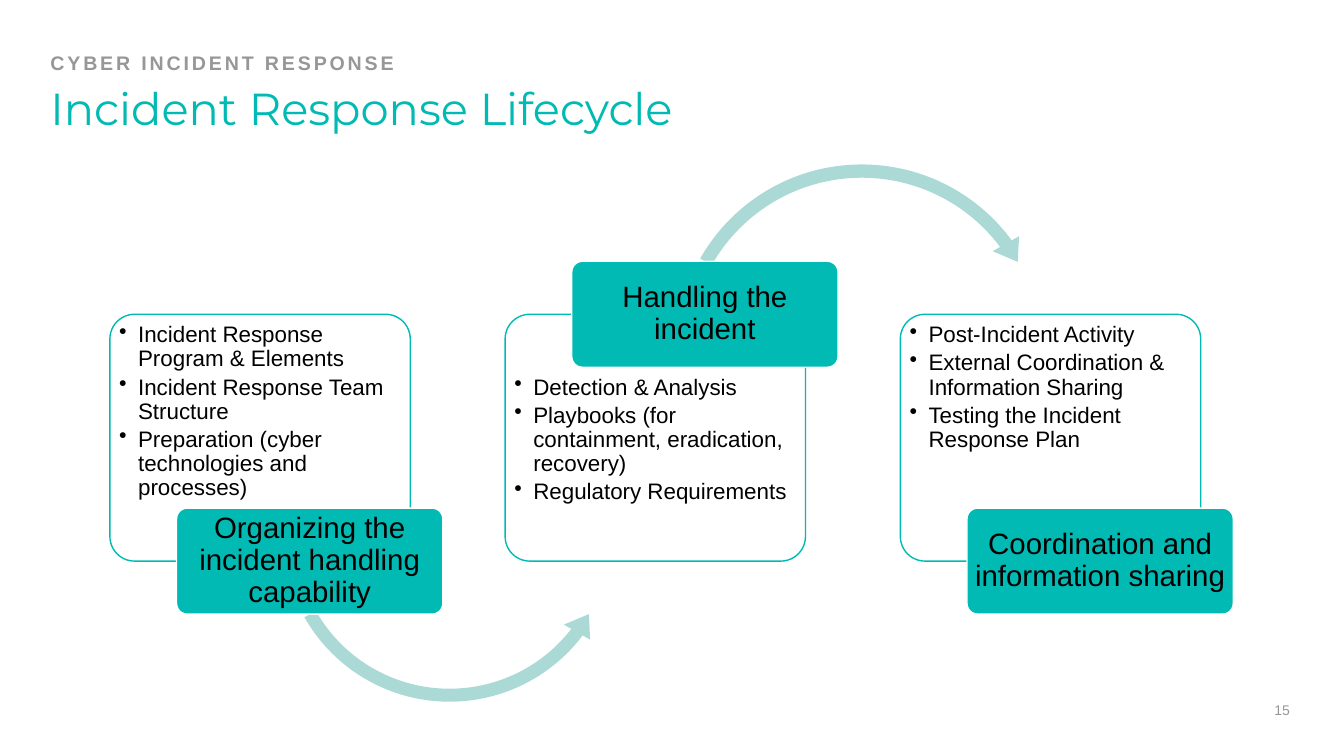
import pptx
import pptx.util
import pptx.dml.color
import pptx.enum.shapes
import pptx.enum.text
import pptx.oxml.ns
import lxml.etree

Cm = pptx.util.Cm
Pt = pptx.util.Pt
Shape = pptx.enum.shapes.MSO_SHAPE
Align = pptx.enum.text.PP_ALIGN
Anchor = pptx.enum.text.MSO_ANCHOR

HUES = {"teal": "00BAB3", "pale": "ABD9D6", "grey": "979797",
        "white": "FFFFFF", "black": "000000"}

# Arrow kinds: shape, left and top from the card, size, adjustments
ARROWS = {
    "under": (Shape.LEFT_CIRCULAR_ARROW, 4.14, 1.14, 8.84,
              (0.037, 4.641, 22.397, 90.245, 0.043)),
    "over": (Shape.CIRCULAR_ARROW, 4.09, -3.99, 9.8,
             (0.034, 4.148, 194.097, 125.755, 0.039)),
}

# Stages: tag, tag at top, arrow to the next stage, points
STAGES = [
    ("Organizing the incident handling capability", False, "under",
     ["Incident Response Program & Elements",
      "Incident Response Team Structure",
      "Preparation (cyber technologies and processes)"]),
    ("Handling the incident", True, "over",
     ["Detection & Analysis",
      "Playbooks (for containment, eradication, recovery)",
      "Regulatory Requirements"]),
    ("Coordination and information sharing", False, None,
     ["Post-Incident Activity",
      "External Coordination & Information Sharing",
      "Testing the Incident Response Plan"]),
]


def rgb(hue):
    return pptx.dml.color.RGBColor.from_string(HUES[hue])


def set_frame(shape, anchor, side=0, top=0):
    frame = shape.text_frame
    frame.word_wrap = True
    frame.vertical_anchor = anchor
    frame.margin_left = frame.margin_right = Cm(side)
    frame.margin_top, frame.margin_bottom = Cm(top), 0
    return frame


def style(para, size, hue, face="Arial", align=Align.LEFT, bold=False):
    para.alignment = align
    para.line_spacing = 0.9
    para.font.size = Pt(size)
    para.font.name = face
    para.font.bold = bold
    para.font.color.rgb = rgb(hue)


def add_label(slide, box, text, anchor, top=0, **look):
    shape = slide.shapes.add_textbox(*map(Cm, box))
    para = set_frame(shape, anchor, top=top).paragraphs[0]
    para.text = text
    style(para, **look)
    return para


def add_form(slide, kind, box, fill, line=None):
    shape = slide.shapes.add_shape(kind, *map(Cm, box))
    shape.shadow.inherit = False
    shape.fill.solid()
    shape.fill.fore_color.rgb = rgb(fill)
    if line:
        shape.line.color.rgb = rgb(line)
        shape.line.width = Pt(1)
    else:
        shape.line.fill.background()
    return shape


def add_block(slide, box, fill, line):
    shape = add_form(slide, Shape.ROUNDED_RECTANGLE, box, fill, line)
    shape.adjustments[0] = 0.1
    return shape


def add_bullet(para):
    props = para._p.get_or_add_pPr()
    props.set("marL", str(Cm(0.48)))
    props.set("indent", str(-Cm(0.48)))
    mark = lxml.etree.SubElement(props, pptx.oxml.ns.qn("a:buChar"))
    mark.set("char", "•")


def add_head(slide, left, top, width):
    # Kicker above the title
    para = add_label(slide, (left, top, width, 0.53), "CYBER INCIDENT RESPONSE",
                     Anchor.BOTTOM, size=14, hue="grey", bold=True)
    para._p.pPr.get_or_add_defRPr().set("spc", "200")
    add_label(slide, (left, top + 0.58, width, 1.5), "Incident Response Lifecycle",
              Anchor.TOP, top=0.25, size=32, hue="teal", face="Montserrat")


def add_stage(slide, left, top, width, height, tag, high, arrow, points):
    # Card with its points
    card = add_block(slide, (left, top, width, height), "white", "teal")
    frame = set_frame(card, Anchor.TOP, 0.05, 1.37 if high else 0.05)
    for i, point in enumerate(points):
        para = frame.add_paragraph() if i else frame.paragraphs[0]
        para.text = point
        add_bullet(para)
        para.space_after = Pt(2.8)
        style(para, 16, "black")

    # Arrow to the next stage
    if arrow:
        kind, dx, dy, size, turns = ARROWS[arrow]
        curve = add_form(slide, kind, (left + dx, top + dy, size, size), "pale")
        for i, turn in enumerate(turns):
            curve.adjustments[i] = turn

    # Tag across the card's edge
    deep = 2.67
    edge = top if high else top + height
    place = (left + 1.68, edge - deep / 2, width - 0.86, deep)
    label = add_block(slide, place, "teal", "white")
    para = set_frame(label, Anchor.MIDDLE, 0.1).paragraphs[0]
    para.text = tag
    style(para, 21, "black", align=Align.CENTER)


def main():
    deck = pptx.Presentation()
    deck.slide_width, deck.slide_height = Cm(33.87), Cm(19.05)
    slide = deck.slides.add_slide(deck.slide_layouts[6])
    add_head(slide, 1.27, 1.35, 31.32)
    for i, stage in enumerate(STAGES):
        add_stage(slide, 2.77 + 9.96 * i, 7.92, 7.57, 6.22, *stage)
    # Page number
    add_label(slide, (31.8, 17.7, 1.02, 0.43), "15", Anchor.MIDDLE,
              size=10, hue="grey", align=Align.CENTER)
    deck.save("out.pptx")


if __name__ == "__main__":
    main()
